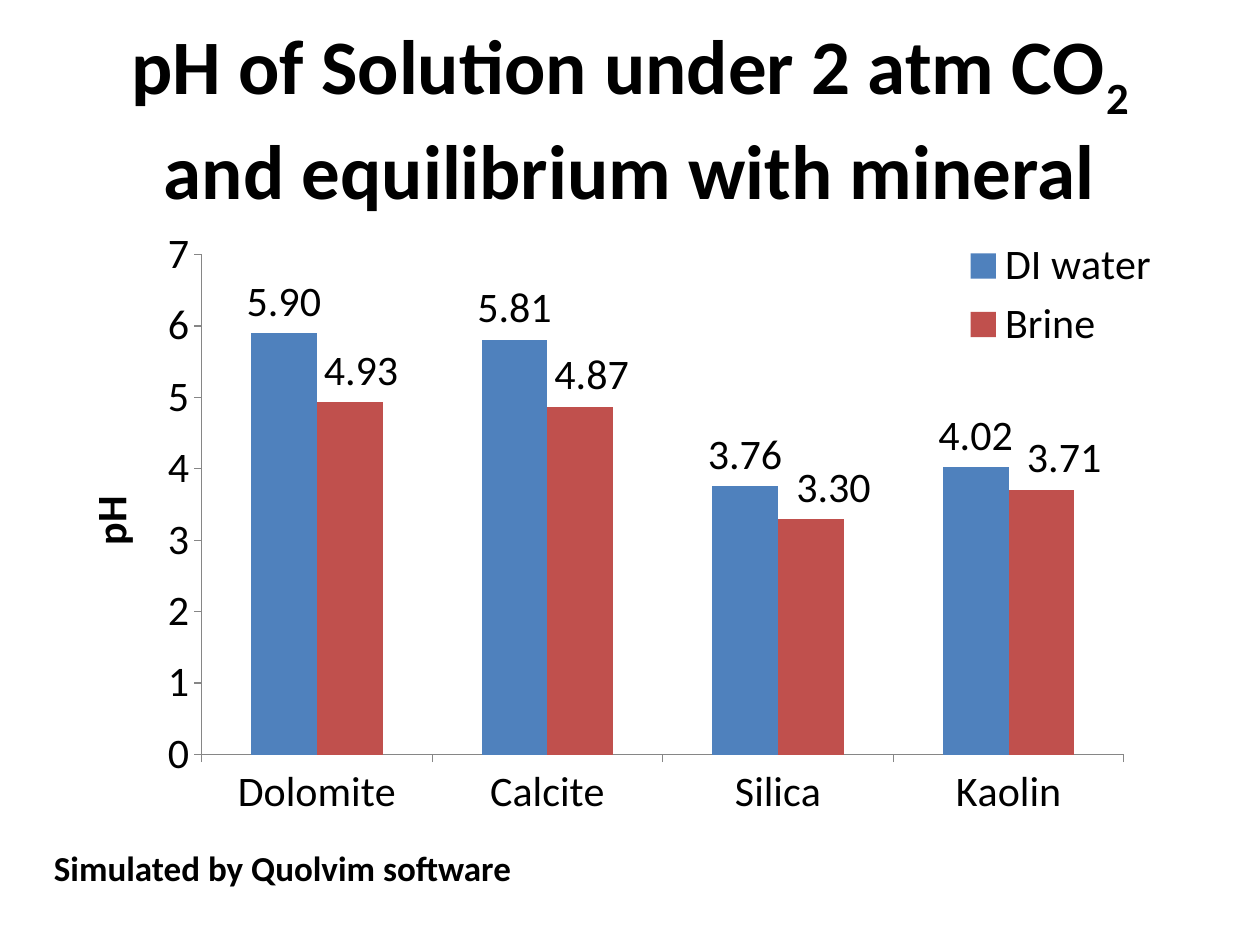
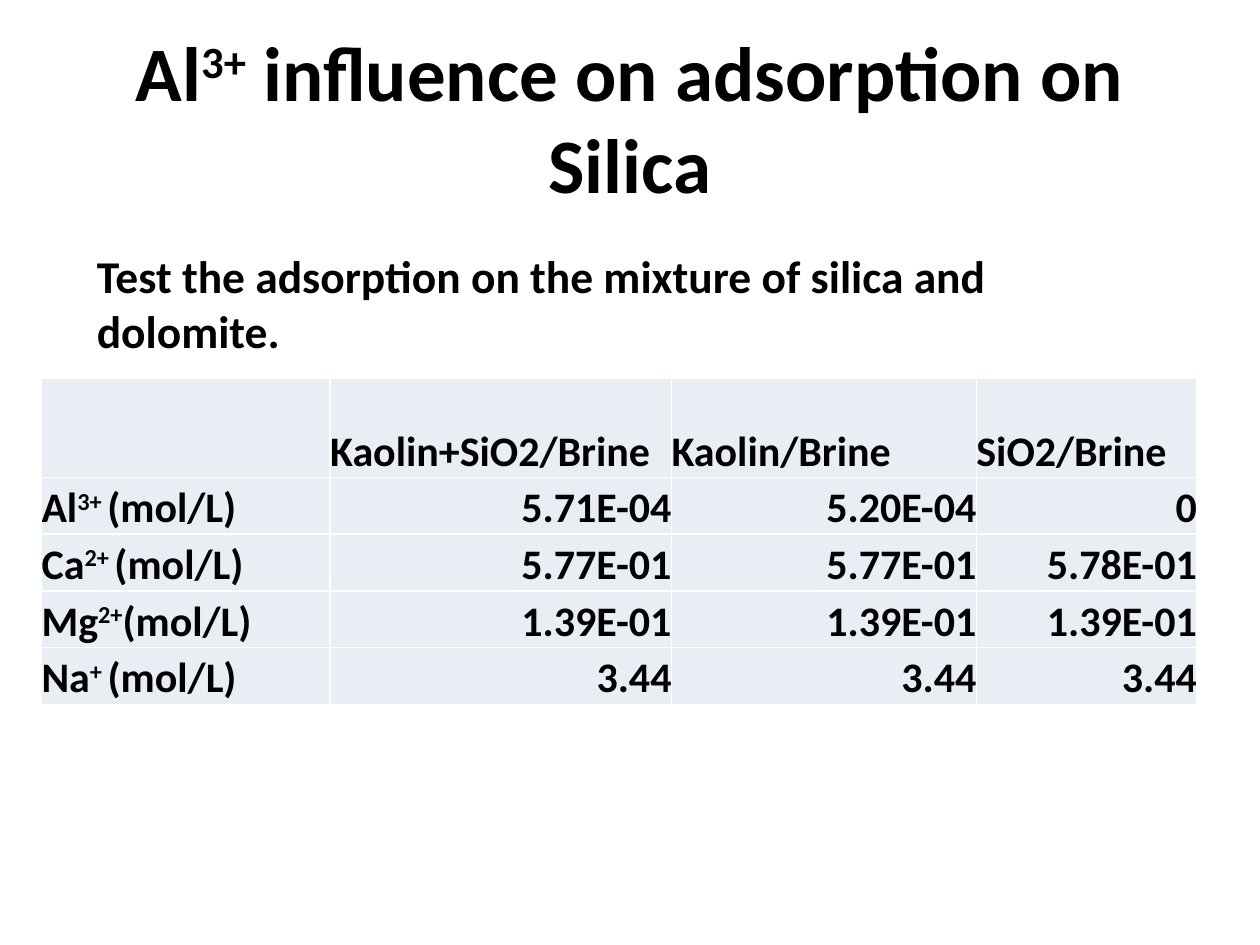
from lxml import etree
from pptx import Presentation
from pptx import util as u
from pptx.chart import data as chart_data
from pptx.dml import color
from pptx.enum import chart as ch, text
from pptx.oxml import parse_xml
from pptx.oxml.ns import nsdecls, qn

BLACK, WHITE, AXIS = "000000", "FFFFFF", "868686"
CELL_FILL = "E9EDF4"
SERIES_COLOURS = ("4F81BD", "C0504D")
SUB, SUPER = -25, 30


def rgb(value):
    return color.RGBColor.from_string(value)


def manual_layout(**settings):
    """Return a c:layout element; settings keep the order the schema wants."""
    layout = parse_xml(f"<c:layout {nsdecls('c')}><c:manualLayout/></c:layout>")
    for tag, value in settings.items():
        etree.SubElement(layout[0], qn(f"c:{tag}")).set("val", str(value))
    return layout


def replace_layout(parent, after, layout):
    """Put layout behind the last child of parent whose tag is in after."""
    for old in parent.findall(qn("c:layout")):
        parent.remove(old)
    tags = [qn(f"c:{name}") for name in after]
    index = max((i + 1 for i, e in enumerate(parent) if e.tag in tags), default=0)
    parent.insert(index, layout)


class Deck:
    """Holds the shared style and the slide being filled."""

    font = "Calibri"
    title_box = (0.5, 0.3, 9, 1.25)

    def __init__(self):
        self.prs = Presentation()
        self.prs.slide_width, self.prs.slide_height = u.Inches(10), u.Inches(7.5)
        self.s = None

    def slide(self, *title_runs):
        self.s = self.prs.slides.add_slide(self.prs.slide_layouts[6])
        self.text(self.title_box, title_runs, 44, text.PP_ALIGN.CENTER,
                  text.MSO_ANCHOR.MIDDLE)

    def style(self, font, size, bold=False):
        font.name, font.size, font.bold = self.font, u.Pt(size), bold
        font.color.rgb = rgb(BLACK)

    def runs(self, p, parts, size):
        """Add bold runs; a part is a string or (string, baseline percent)."""
        for part in parts:
            words, baseline = (part, 0) if isinstance(part, str) else part
            r = p.add_run()
            r.text = words
            self.style(r.font, size, bold=True)
            if baseline:
                r.font._element.set("baseline", str(baseline * 1000))

    def text(self, box, parts, size, align=text.PP_ALIGN.LEFT,
             anchor=text.MSO_ANCHOR.TOP, after=0):
        tf = self.s.shapes.add_textbox(*map(u.Inches, box)).text_frame
        tf.word_wrap, tf.vertical_anchor = True, anchor
        p = tf.paragraphs[0]
        p.alignment, p.space_after = align, u.Pt(after)
        self.runs(p, parts, size)

    def column_chart(self, box, plot_box, categories, series, axis_title, size):
        """Add a chart; plot_box is in inches from the chart's corner."""
        data = chart_data.CategoryChartData(number_format="#,##0.00")
        data.categories = categories
        for name, values in series.items():
            data.add_series(name, values)
        chart = self.s.shapes.add_chart(
            ch.XL_CHART_TYPE.COLUMN_CLUSTERED, *map(u.Inches, box), data).chart
        self.style(chart.font, size)
        chart.has_title = False

        chart.has_legend = True
        legend = chart.legend
        legend.position = ch.XL_LEGEND_POSITION.RIGHT
        legend.include_in_layout = False
        self.style(legend.font, size)
        replace_layout(legend._element, ["legendPos"], manual_layout(
            xMode="edge", yMode="edge", x=0.78, y=0.02, w=0.2, h=0.2))
        left, top, width, height = plot_box
        replace_layout(chart._chartSpace.chart.plotArea, [], manual_layout(
            layoutTarget="inner", xMode="edge", yMode="edge",
            x=left / box[2], y=top / box[3], w=width / box[2], h=height / box[3]))

        for axis in (chart.category_axis, chart.value_axis):
            axis.has_major_gridlines = False
            axis.major_tick_mark = ch.XL_TICK_MARK.OUTSIDE
            axis.format.line.color.rgb = rgb(AXIS)
            axis.format.line.width = u.Pt(0.75)
            self.style(axis.tick_labels.font, size)
        value_axis = chart.value_axis
        value_axis.minimum_scale, value_axis.maximum_scale = 0, 7
        value_axis.major_unit = 1
        value_axis.tick_labels.number_format = "0"
        value_axis.tick_labels.number_format_is_linked = False
        self.runs(value_axis.axis_title.text_frame.paragraphs[0], [axis_title], size)
        replace_layout(value_axis.axis_title._element, ["tx"], manual_layout(
            xMode="edge", yMode="edge", x=0.01, y=0.43))

        plot = chart.plots[0]
        plot.gap_width, plot.overlap, plot.vary_by_categories = 150, 0, False
        for bars, fill in zip(plot.series, SERIES_COLOURS):
            bars.format.fill.solid()
            bars.format.fill.fore_color.rgb = rgb(fill)
            bars.invert_if_negative = False
            labels = bars.data_labels
            labels.show_value = True
            labels.number_format = "#,##0.00"
            labels.number_format_is_linked = False
            labels.position = ch.XL_LABEL_POSITION.OUTSIDE_END
            self.style(labels.font, size)
        return chart

    def shift_labels(self, bars, offsets, size):
        """Move each value label right by a fraction of the chart width."""
        for i, x in enumerate(offsets):
            label = bars.points[i].data_label
            self.style(label.font, size)
            label.position = ch.XL_LABEL_POSITION.OUTSIDE_END
            dlbl = bars.data_labels._element.findall(qn("c:dLbl"))[i]
            replace_layout(dlbl, ["idx"], manual_layout(x=x, y=0))
            dlbl.insert(2, parse_xml(
                f'<c:numFmt {nsdecls("c")} formatCode="#,##0.00" sourceLinked="0"/>'))

    def table(self, box, widths, heights, rows, size):
        table = self.s.shapes.add_table(
            len(rows), len(widths), *map(u.Inches, box)).table
        for column, width in zip(table.columns, widths):
            column.width = u.Inches(width)
        for row, height in zip(table.rows, heights):
            row.height = u.Inches(height)
        for i, row in enumerate(rows):
            for j, parts in enumerate(row):
                align = text.PP_ALIGN.RIGHT if i and j else text.PP_ALIGN.LEFT
                self.cell(table.cell(i, j), parts, size, align)

    def cell(self, cell, parts, size, align):
        cell.margin_left = cell.margin_right = 0
        cell.margin_top = cell.margin_bottom = 0
        cell.vertical_anchor = text.MSO_ANCHOR.BOTTOM
        for side in "LRTB":
            cell._tc.get_or_add_tcPr().append(parse_xml(
                f'<a:ln{side} {nsdecls("a")} w="12700"><a:solidFill>'
                f'<a:srgbClr val="{WHITE}"/></a:solidFill></a:ln{side}>'))
        cell.fill.solid()
        cell.fill.fore_color.rgb = rgb(CELL_FILL)
        p = cell.text_frame.paragraphs[0]
        p.alignment = align
        self.runs(p, parts, size)


def ph_slide(deck):
    deck.slide("pH of Solution under 2 atm CO", ("2 ", SUB),
               "and equilibrium with mineral")
    deck.text((0.33, 6.67, 9.17, 0.44), ["Simulated by Quolvim software"], 20, after=6)
    chart = deck.column_chart(
        (0.5, 1.75, 9, 4.95), (1.1, 0.27, 7.32, 3.97),
        ["Dolomite", "Calcite", "Silica", "Kaolin"],
        {"DI water": (5.90, 5.81, 3.76, 4.02), "Brine": (4.93, 4.87, 3.30, 3.71)},
        "pH", 24)
    deck.shift_labels(chart.plots[0].series[1], (0.01, 0.01, 0.02, 0.02), 24)


def adsorption_slide(deck):
    deck.slide("Al", ("3+", SUPER), " influence on adsorption on Silica")
    ions = [
        ("Al", "3+ ", "5.71E-04", "5.20E-04", "0"),
        ("Ca", "2+ ", "5.77E-01", "5.77E-01", "5.78E-01"),
        ("Mg", "2+", "1.39E-01", "1.39E-01", "1.39E-01"),
        ("Na", "+ ", "3.44", "3.44", "3.44"),
    ]
    header = [[], ["Kaolin+SiO2/Brine"], ["Kaolin/Brine"], ["SiO2/Brine"]]
    rows = [header] + [
        [[ion, (charge, SUPER), "(mol/L)"]] + [[value] for value in values]
        for ion, charge, *values in ions]
    deck.table((0.33, 3, 9.17, 2.58), (2.29, 2.71, 2.42, 1.75),
               [0.79] + [0.45] * len(ions), rows, 24)
    deck.text((0.67, 1.92, 8.42, 0.98),
              ["Test the adsorption on the mixture of silica and dolomite."], 26)


def main():
    deck = Deck()
    ph_slide(deck)
    adsorption_slide(deck)
    deck.prs.save("out.pptx")


if __name__ == "__main__":
    main()
